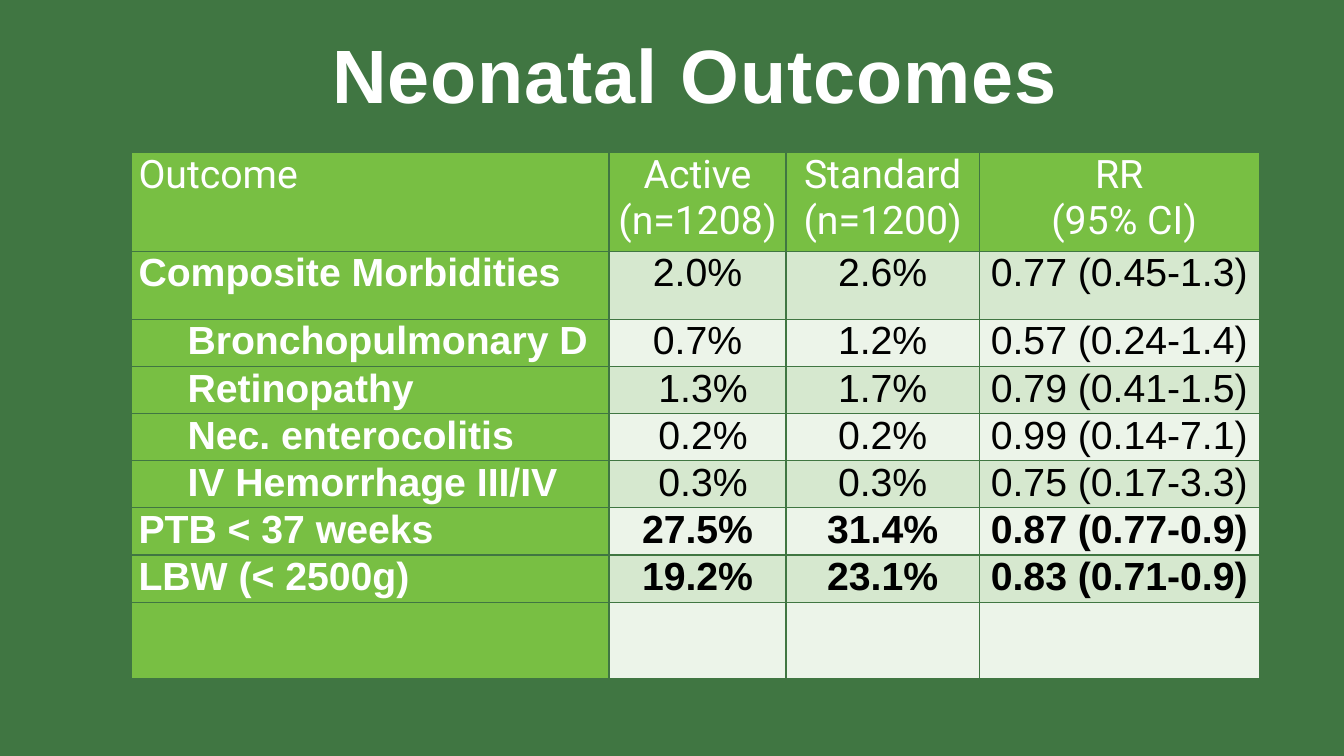
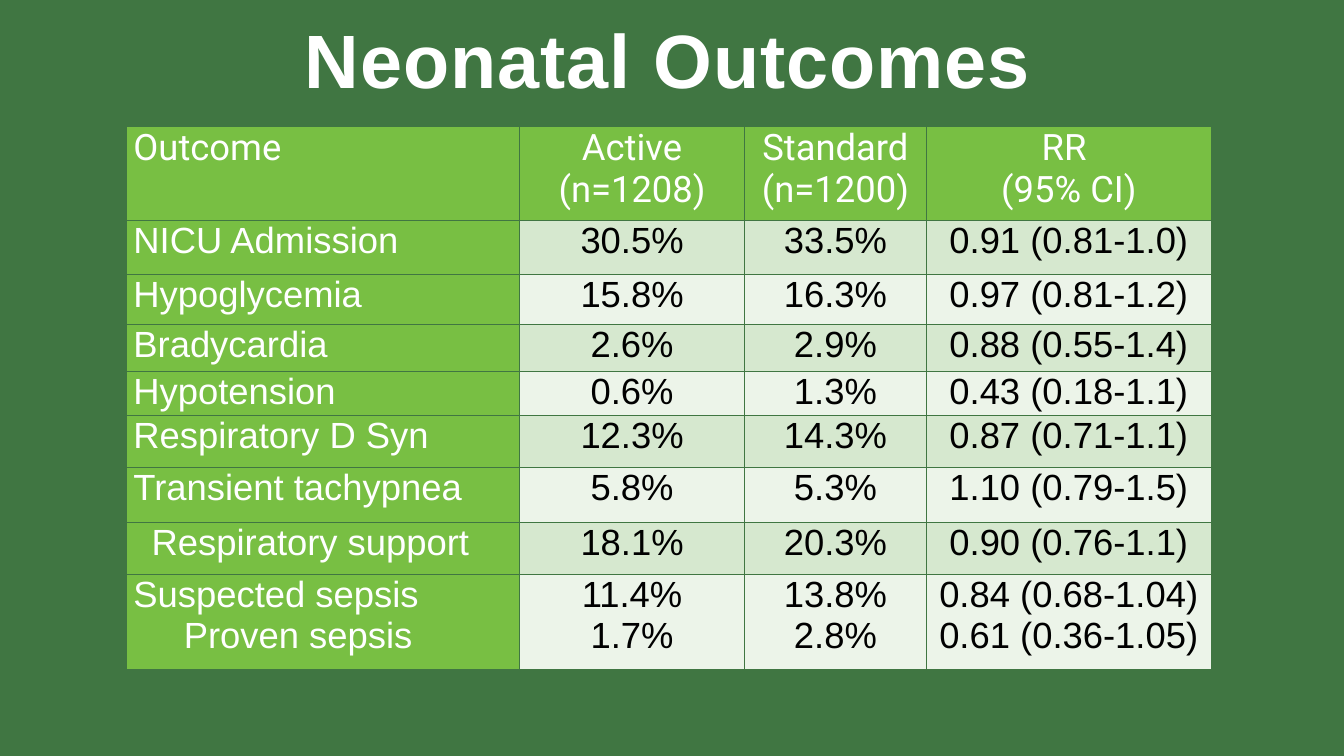
"""Build two slides of neonatal outcome tables."""
from lxml.etree import SubElement
from pptx import Presentation
from pptx.dml.color import RGBColor
from pptx.enum.text import PP_ALIGN
from pptx.oxml.ns import qn
from pptx.util import Pt

DARK = RGBColor(0x40, 0x76, 0x42)
GREEN = RGBColor(0x78, 0xBF, 0x43)
PALE = RGBColor(0xD6, 0xE8, 0xCF)
LIGHT = RGBColor(0xEC, 0xF4, 0xE9)
WHITE = RGBColor(0xFF, 0xFF, 0xFF)
BLACK = RGBColor(0x00, 0x00, 0x00)
HEAD = ["Outcome", "Active (n=1208)", "Standard (n=1200)", "RR\n(95% CI)"]


def write(frame, text, size=28, face="Arial", color=WHITE, bold=False,
          align=PP_ALIGN.CENTER, space=0, gaps=()):
    """Write one paragraph per line; a gap insets its left, or right if negative."""
    for i, line in enumerate(text.split("\n")):
        para = frame.paragraphs[0] if i == 0 else frame.add_paragraph()
        para.alignment = align
        gap = gaps[i] if i < len(gaps) else 0
        if gap:
            side = "marL" if gap > 0 else "marR"
            para._p.get_or_add_pPr().set(side, str(Pt(abs(gap))))
        run = para.add_run()
        run.text = line
        font = run.font
        font.size, font.name, font.bold = Pt(size), face, bold
        font.color.rgb = color
        if space:
            run._r.get_or_add_rPr().set("spc", str(space))


def border(cell):
    """Draw a thin dark line on all four sides of a cell."""
    props = cell._tc.get_or_add_tcPr()
    for i, side in enumerate(("lnL", "lnR", "lnT", "lnB")):
        line = props.makeelement(qn("a:" + side), {"w": str(Pt(1))})
        fill = SubElement(line, qn("a:solidFill"))
        SubElement(fill, qn("a:srgbClr"), val=str(DARK))
        props.insert(i, line)


pages = [
    {
        "title": (152.5, 11), "table": (94, 108.5), "size": 28,
        "cols": [341, 126.5, 138, 200],
        "rows": [71, 48.7] + [33.6] * 6 + [54.9],
        "bold": {6, 7}, "lead": True,
        "gaps": {(0, 3): [0, 7], (2, 0): [35], (3, 0): [35], (4, 0): [35],
                 (5, 0): [35], (3, 1): [8], (4, 1): [8], (5, 1): [8]},
        "data": [
            ["Composite Morbidities", "2.0%", "2.6%", "0.77 (0.45-1.3)"],
            ["Bronchopulmonary D", "0.7%", "1.2%", "0.57 (0.24-1.4)"],
            ["Retinopathy", "1.3%", "1.7%", "0.79 (0.41-1.5)"],
            ["Nec. enterocolitis", "0.2%", "0.2%", "0.99 (0.14-7.1)"],
            ["IV Hemorrhage III/IV", "0.3%", "0.3%", "0.75 (0.17-3.3)"],
            ["PTB < 37 weeks", "27.5%", "31.4%", "0.87 (0.77-0.9)"],
            ["LBW (< 2500g)", "19.2%", "23.1%", "0.83 (0.71-0.9)"],
            ["", "", "", ""],
        ],
    },
    {
        "title": (133, 0), "table": (90.3, 90.3), "size": 26,
        "cols": [281, 160.5, 130, 203.5],
        "rows": [67, 38.7, 36, 33.3, 31.5, 37, 39.5, 37.2, 67.6],
        "bold": set(), "lead": False,
        "gaps": {(0, 3): [-7, 7], (7, 0): [13], (8, 0): [0, 36]},
        "data": [
            ["NICU Admission", "30.5%", "33.5%", "0.91 (0.81-1.0)"],
            ["Hypoglycemia", "15.8%", "16.3%", "0.97 (0.81-1.2)"],
            ["Bradycardia", "2.6%", "2.9%", "0.88 (0.55-1.4)"],
            ["Hypotension", "0.6%", "1.3%", "0.43 (0.18-1.1)"],
            ["Respiratory D Syn", "12.3%", "14.3%", "0.87 (0.71-1.1)"],
            ["Transient tachypnea", "5.8%", "5.3%", "1.10 (0.79-1.5)"],
            ["Respiratory support", "18.1%", "20.3%", "0.90 (0.76-1.1)"],
            ["Suspected sepsis\nProven sepsis", "11.4%\n1.7%",
             "13.8%\n2.8%", "0.84 (0.68-1.04)\n0.61 (0.36-1.05)"],
        ],
    },
]

deck = Presentation()
deck.slide_width, deck.slide_height = Pt(960), Pt(540)
fill = deck.slide_master.background.fill
fill.solid()
fill.fore_color.rgb = DARK

for page in pages:
    slide = deck.slides.add_slide(deck.slide_layouts[6])
    left, top = page["title"]
    frame = slide.shapes.add_textbox(Pt(left), Pt(top), Pt(688), Pt(90)).text_frame
    frame.word_wrap = True
    frame.margin_top = Pt(9)
    write(frame, "Neonatal Outcomes", size=54, bold=True, space=70)

    left, top = page["table"]
    cols, rows = page["cols"], page["rows"]
    grid = slide.shapes.add_table(len(rows), len(cols), Pt(left), Pt(top),
                                  Pt(sum(cols)), Pt(sum(rows))).table
    for col, width in zip(grid.columns, cols):
        col.width = Pt(width)
    for row, height in zip(grid.rows, rows):
        row.height = Pt(height)

    for r, texts in enumerate([HEAD] + page["data"]):
        for c, text in enumerate(texts):
            cell = grid.cell(r, c)
            label = r == 0 or c == 0
            cell.margin_left = cell.margin_right = Pt(5)
            cell.margin_top = cell.margin_bottom = Pt(0)
            cell.fill.solid()
            cell.fill.fore_color.rgb = GREEN if label else PALE if r % 2 else LIGHT
            border(cell)
            if text:
                write(cell.text_frame, text, size=page["size"],
                      face="Arial" if r else "Roboto",
                      color=WHITE if label else BLACK,
                      bold=r in page["bold"] or (page["lead"] and r > 0 and c == 0),
                      align=PP_ALIGN.CENTER if c else PP_ALIGN.LEFT,
                      gaps=page["gaps"].get((r, c), ()))

deck.save("out.pptx")
